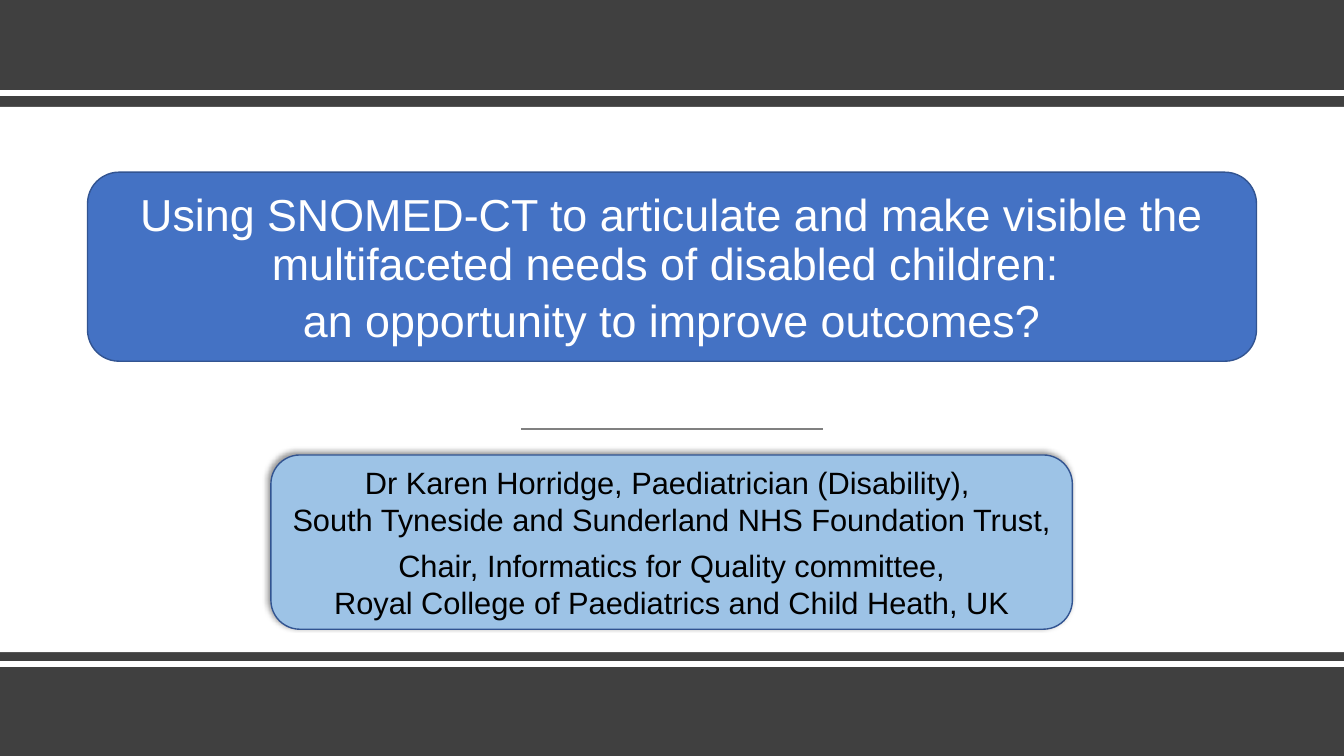
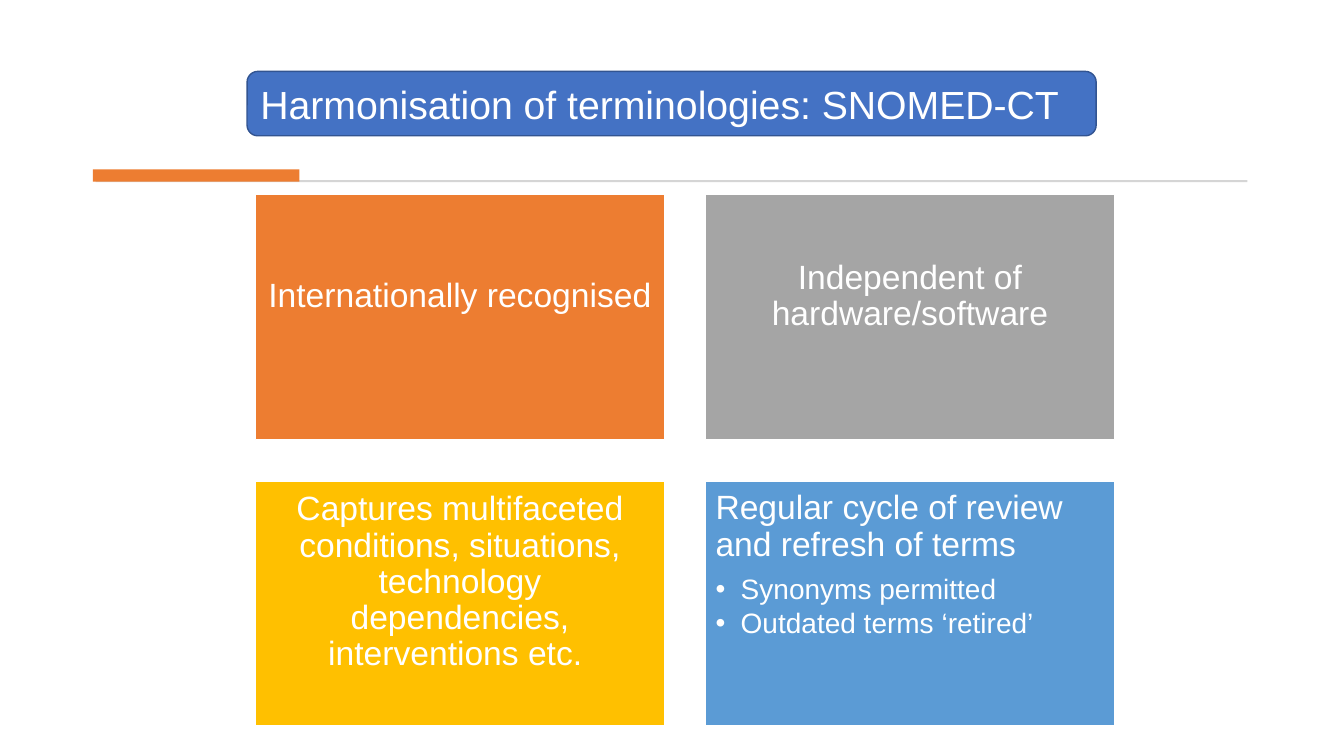
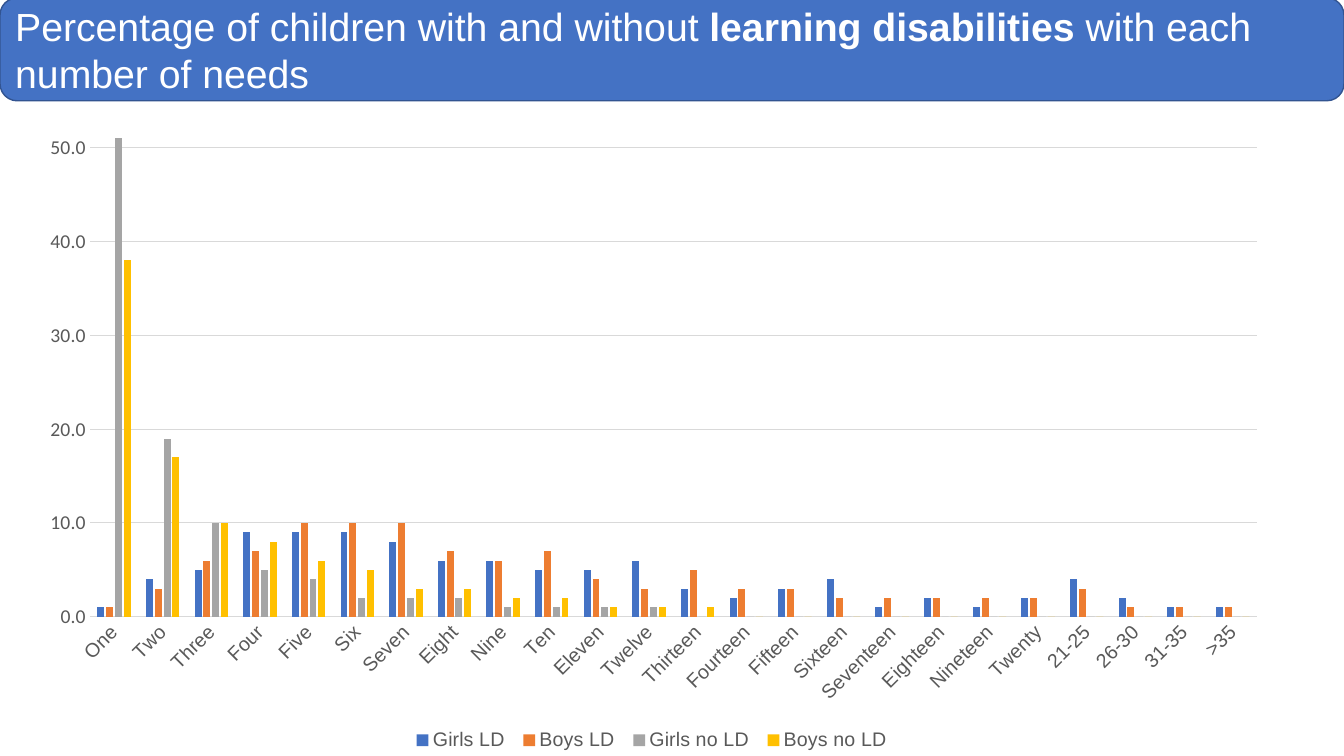
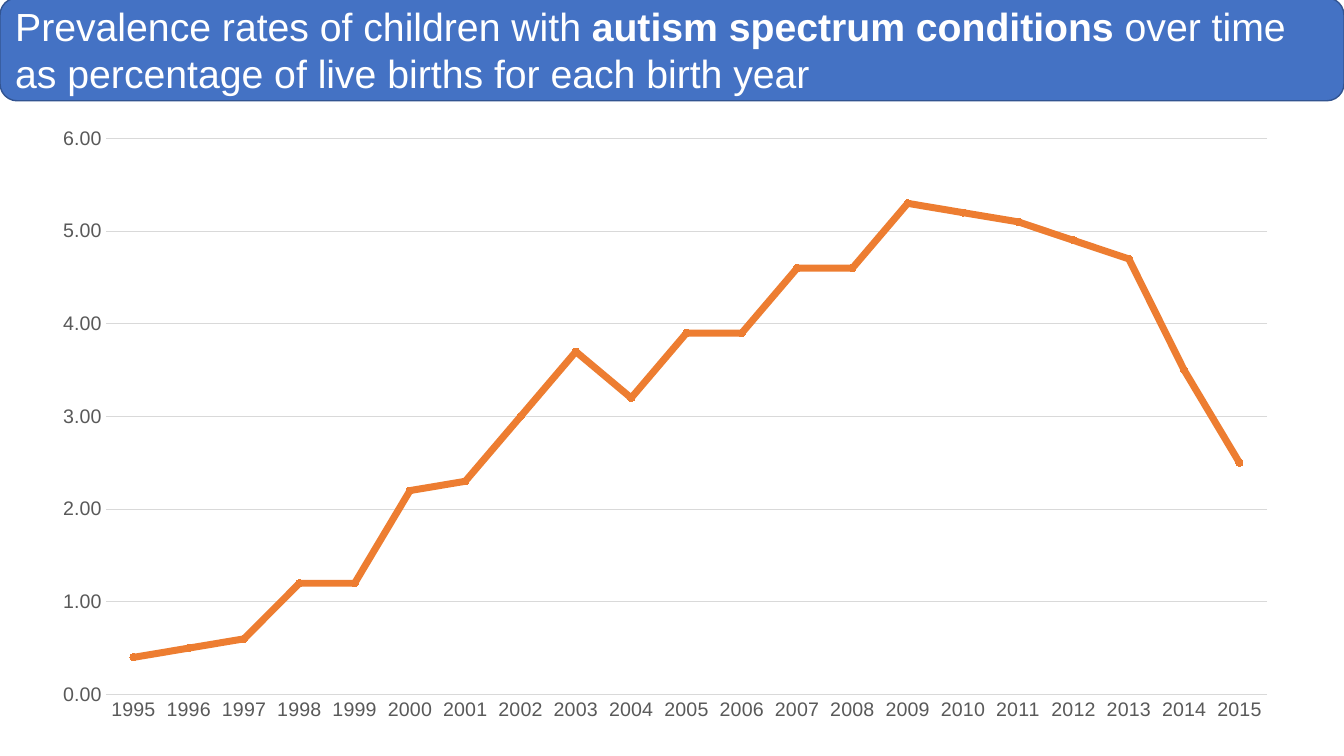
from lxml.etree import SubElement
from pptx import Presentation
from pptx.chart.data import CategoryChartData
from pptx.dml.color import RGBColor
from pptx.enum.chart import XL_CHART_TYPE, XL_LEGEND_POSITION, XL_MARKER_STYLE, XL_TICK_MARK
from pptx.enum.shapes import MSO_CONNECTOR, MSO_SHAPE
from pptx.enum.text import MSO_ANCHOR, MSO_AUTO_SIZE, PP_ALIGN
from pptx.oxml import parse_xml
from pptx.oxml.ns import nsdecls, qn
from pptx.util import Pt

W, H = 960, 540
FONT = "Arial"
C = {
    "white": "FFFFFF", "black": "000000", "dark": "404040", "grey": "808080",
    "rule": "D5D5D5", "grid": "D9D9D9", "label": "595959", "edge": "325491",
    "blue": "4472C4", "orange": "ED7D31", "silver": "A5A5A5", "gold": "FFC000",
    "sky": "5B9BD5", "pale": "9DC3E6",
}

TALK = [
    "Using SNOMED-CT to articulate and make visible the multifaceted needs of disabled children: ",
    "an opportunity to improve outcomes?",
]
SPEAKER = [
    "Dr Karen Horridge, Paediatrician (Disability), \nSouth Tyneside and Sunderland NHS Foundation Trust, ",
    "Chair, Informatics for Quality committee,\nRoyal College of Paediatrics and Child Heath, UK",
]
TERMS_TITLE = "Harmonisation of terminologies: SNOMED-CT"
CARDS = [
    ("orange", "Internationally recognised", []),
    ("silver", "Independent of hardware/software", []),
    ("gold", "Captures multifaceted conditions, situations, technology dependencies, interventions etc. ", []),
    ("sky", "Regular cycle of review and refresh of terms", ["Synonyms permitted", "Outdated terms ‘retired’"]),
]
NEEDS_TITLE = ("Percentage of children with and without ", "learning disabilities ", "with each number of needs")
NEEDS = [
    "One", "Two", "Three", "Four", "Five", "Six", "Seven", "Eight", "Nine", "Ten", "Eleven", "Twelve",
    "Thirteen", "Fourteen", "Fifteen", "Sixteen", "Seventeen", "Eighteen", "Nineteen", "Twenty",
    "21-25", "26-30", "31-35", ">35",
]
NEEDS_SERIES = [
    ("Girls LD ", "blue", [1, 4, 5, 9, 9, 9, 8, 6, 6, 5, 5, 6, 3, 2, 3, 4, 1, 2, 1, 2, 4, 2, 1, 1]),
    ("Boys LD ", "orange", [1, 3, 6, 7, 10, 10, 10, 7, 6, 7, 4, 3, 5, 3, 3, 2, 2, 2, 2, 2, 3, 1, 1, 1]),
    ("Girls no LD ", "silver", [51, 19, 10, 5, 4, 2, 2, 2, 1, 1, 1, 1, 0, 0, 0, 0, 0, 0, 0, 0, 0, 0, 0, 0]),
    ("Boys no LD ", "gold", [38, 17, 10, 8, 6, 5, 3, 3, 2, 2, 1, 1, 1, 0, 0, 0, 0, 0, 0, 0, 0, 0, 0, 0]),
]
AUTISM_TITLE = ("Prevalence rates of children with ", "autism spectrum conditions ",
                "over time as percentage of live births for each birth year")
YEARS = [str(y) for y in range(1995, 2016)]
AUTISM = [("Series 1", "orange", [0.4, 0.5, 0.6, 1.2, 1.2, 2.2, 2.3, 3, 3.7, 3.2, 3.9,
                                  3.9, 4.6, 4.6, 5.3, 5.2, 5.1, 4.9, 4.7, 3.5, 2.5])]


def rgb(name):
    return RGBColor.from_string(C[name])


def set_font(font, size, color, name=FONT):
    font.size, font.name = Pt(size), name
    font.color.rgb = rgb(color)


def add_box(s, box, fill, edge=None, kind=MSO_SHAPE.RECTANGLE):
    sp = s.shapes.add_shape(kind, *[Pt(v) for v in box])
    sp.shadow.inherit = False
    sp.fill.solid()
    sp.fill.fore_color.rgb = rgb(fill)
    if edge:
        sp.line.color.rgb = rgb(edge)
        sp.line.width = Pt(1)
    else:
        sp.line.fill.background()
    return sp


def add_line(s, x1, x2, y, color, width):
    ln = s.shapes.add_connector(MSO_CONNECTOR.STRAIGHT, Pt(x1), Pt(y), Pt(x2), Pt(y))
    ln.line.color.rgb = rgb(color)
    ln.line.width = Pt(width)
    SubElement(ln.element.spPr, qn("a:effectLst"))


def add_para(tf, runs, size, color="white", align=PP_ALIGN.LEFT, spacing=1.0, after=0, bullet=False):
    p = tf.paragraphs[0]
    if p.runs:
        p = tf.add_paragraph()
    p.alignment, p.line_spacing = align, spacing
    p.space_before, p.space_after = Pt(0), Pt(after)
    for i, text in enumerate(runs):
        for j, line in enumerate(text.split("\n")):
            if j:
                p.add_line_break()
            r = p.add_run()
            r.text = line
            set_font(r.font, size, color)
            r.font.bold = i == 1
    if bullet:
        pPr = p._p.get_or_add_pPr()
        pPr.set("marL", str(Pt(18)))
        pPr.set("indent", str(-Pt(18)))
        SubElement(pPr, qn("a:buFont")).set("typeface", FONT)
        SubElement(pPr, qn("a:buChar")).set("char", "•")


def add_plate(s, sp, box, fill, anchor):
    plate = add_box(s, box, fill, "edge", MSO_SHAPE.ROUNDED_RECTANGLE)
    s.shapes.element.append(sp.element)
    sp.left, sp.top, sp.width, sp.height = [Pt(v) for v in box]
    tf = sp.text_frame
    tf.word_wrap, tf.auto_size, tf.vertical_anchor = True, MSO_AUTO_SIZE.NONE, anchor
    corner = 0.05 * box[3]
    tf.margin_left = tf.margin_right = Pt(7.2 + corner)
    tf.margin_top = tf.margin_bottom = Pt(3.6 + corner)
    return plate, tf


def add_shadow(sp):
    effects = sp.element.spPr.find(qn("a:effectLst"))
    effects.append(parse_xml(
        f'<a:outerShdw {nsdecls("a")} blurRad="{Pt(4)}" dist="{Pt(3)}" dir="{225 * 60000}">'
        f'<a:srgbClr val="{C["black"]}"><a:alpha val="40000"/></a:srgbClr></a:outerShdw>'))


def add_chart(s, kind, box, plot, cats, series, fmt, top, step):
    data = CategoryChartData()
    data.categories = cats
    for name, _, vals in series:
        data.add_series(name, vals)
    chart = s.shapes.add_chart(kind, *[Pt(v) for v in box], data).chart
    chart.has_title = chart.has_legend = False
    chart.plots[0].vary_by_categories = False
    cat, val = chart.category_axis, chart.value_axis
    for axis in (cat, val):
        axis.major_tick_mark = axis.minor_tick_mark = XL_TICK_MARK.NONE
        set_font(axis.tick_labels.font, 14, "label")
    cat.format.line.color.rgb = rgb("grid")
    cat.format.line.width = Pt(0.75)
    val.format.line.fill.background()
    val.minimum_scale, val.maximum_scale, val.major_unit = 0, top, step
    val.tick_labels.number_format, val.tick_labels.number_format_is_linked = fmt, False
    val.major_gridlines.format.line.color.rgb = rgb("grid")
    val.major_gridlines.format.line.width = Pt(0.75)
    area = chart.element.find(".//" + qn("c:plotArea"))
    for old in area.findall(qn("c:layout")):
        area.remove(old)
    layout = SubElement(area, qn("c:layout"))
    area.insert(0, layout)
    manual = SubElement(layout, qn("c:manualLayout"))
    parts = [("layoutTarget", "inner"), ("xMode", "edge"), ("yMode", "edge"), *zip("xywh", plot)]
    for tag, v in parts:
        SubElement(manual, qn("c:" + tag)).set("val", str(v))
    return chart


def add_banner(s, runs):
    _, tf = add_plate(s, s.shapes.title, (0, -1.5, W, 73.5), "blue", MSO_ANCHOR.MIDDLE)
    add_para(tf, runs, 28)


def talk_slide():
    s = prs.slides.add_slide(prs.slide_layouts[0])
    title, sub = s.placeholders
    add_box(s, (0, 0, W, H), "dark")
    add_box(s, (0, 76.3, W, 389.5), "white")
    for y in (66.3, 474.5):
        add_line(s, 0, W, y, "white", 4)
    add_line(s, 372, 588, 306.5, "grey", 1.5)
    _, tf = add_plate(s, title, (62.5, 123, 835, 135), "blue", MSO_ANCHOR.BOTTOM)
    for text in TALK:
        add_para(tf, [text], 32, align=PP_ALIGN.CENTER, spacing=0.9, after=6)
    plate, tf = add_plate(s, sub, (193.5, 325, 572.5, 124.5), "pale", MSO_ANCHOR.MIDDLE)
    for text in SPEAKER:
        add_para(tf, [text], 22, "black", PP_ALIGN.CENTER, after=6)
    add_shadow(plate)


def terms_slide():
    s = prs.slides.add_slide(prs.slide_layouts[5])
    _, tf = add_plate(s, s.shapes.title, (176.5, 51, 606.5, 46), "blue", MSO_ANCHOR.BOTTOM)
    add_para(tf, [TERMS_TITLE], 28, spacing=0.9, after=6)
    add_box(s, (68.3, 128.7, 822.7, 1.4), "rule")
    add_box(s, (66.3, 121, 147.5, 8.8), "orange")
    w, h, gap = 292, 175, 29.5
    for i, (color, head, points) in enumerate(CARDS):
        row, col = divmod(i, 2)
        sp = add_box(s, (182.5 + col * (w + gap), 139 + row * (h + gap), w, h), color, "white")
        tf = sp.text_frame
        tf.word_wrap = True
        tf.margin_left = tf.margin_right = tf.margin_top = Pt(7.2)
        tf.margin_bottom = Pt(7.2 if points else 37)
        tf.vertical_anchor = MSO_ANCHOR.TOP if points else MSO_ANCHOR.MIDDLE
        align = PP_ALIGN.LEFT if points else PP_ALIGN.CENTER
        add_para(tf, [head], 24, align=align, spacing=0.9, after=8.4 if points else 0)
        for point in points:
            add_para(tf, [point], 20, spacing=0.9, after=3, bullet=True)


def needs_slide():
    s = prs.slides.add_slide(prs.slide_layouts[5])
    chart = add_chart(s, XL_CHART_TYPE.COLUMN_CLUSTERED, (19.3, 19.5, 896.5, 520), (0.05, 0.15, 0.93, 0.66),
                      NEEDS, NEEDS_SERIES, "0.0", 51.2, 10)
    plot = chart.plots[0]
    plot.gap_width, plot.overlap = 219, -27
    for ser, (_, color, _) in zip(plot.series, NEEDS_SERIES):
        ser.format.fill.solid()
        ser.format.fill.fore_color.rgb = rgb(color)
    chart.value_axis.tick_labels.font.name = "Calibri"
    chart.category_axis._element.find(".//" + qn("a:bodyPr")).set("rot", str(-45 * 60000))
    chart.has_legend = True
    chart.legend.position = XL_LEGEND_POSITION.BOTTOM
    chart.legend.include_in_layout = False
    set_font(chart.legend.font, 14, "label")
    add_banner(s, NEEDS_TITLE)


def autism_slide():
    s = prs.slides.add_slide(prs.slide_layouts[5])
    add_banner(s, AUTISM_TITLE)
    chart = add_chart(s, XL_CHART_TYPE.LINE_MARKERS, (31, 81.3, 892, 441.3), (0.05, 0.04, 0.93, 0.9),
                      YEARS, AUTISM, "0.00", 6, 1)
    ser = chart.plots[0].series[0]
    ser.smooth = False
    ser.format.line.color.rgb = rgb("orange")
    ser.format.line.width = Pt(5)
    ser.marker.style, ser.marker.size = XL_MARKER_STYLE.CIRCLE, 5
    ser.marker.format.fill.solid()
    ser.marker.format.fill.fore_color.rgb = rgb("orange")
    ser.marker.format.line.color.rgb = rgb("orange")


prs = Presentation()
prs.slide_width, prs.slide_height = Pt(W), Pt(H)
talk_slide()
terms_slide()
needs_slide()
autism_slide()
prs.save("out.pptx")
